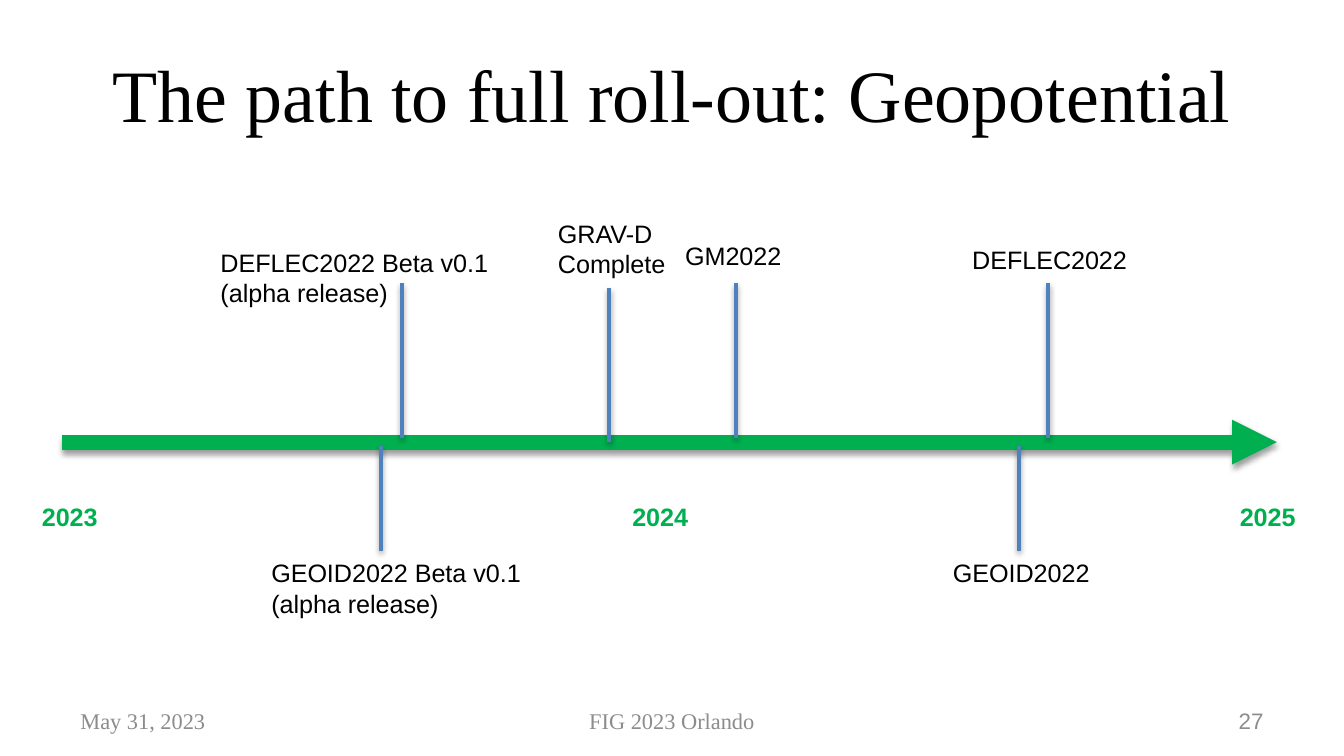
from typing import NamedTuple

from lxml.etree import SubElement
from pptx import Presentation
from pptx.dml.color import RGBColor
from pptx.enum.shapes import MSO_CONNECTOR
from pptx.enum.text import MSO_ANCHOR, PP_ALIGN
from pptx.oxml.ns import qn
from pptx.util import Emu, Inches, Pt

COLORS = {"ink": "000000", "footer": "8C8C8C", "time": "00B050", "stem": "4F81BD"}
SERIF, SANS = "Times New Roman", "Arial"
LABEL_SIZE, LABEL_LEADING = 13.5, 16.2

# Grid: 100 columns across a 16:9 slide, square cells
SLIDE_WIDTH = Inches(10)
SLIDE_HEIGHT = Emu(SLIDE_WIDTH * 9 // 16)
CELL = SLIDE_WIDTH // 100
AXIS_ROW = 32.9
YEAR_ROW = 36.8
ABOVE_AXIS, BELOW_AXIS = 32.6, 33.2
STEM_TOP, STEM_BOTTOM = 21.05, 41


class Box(NamedTuple):
    col: float
    row: float
    cols: float
    rows: float


class Style(NamedTuple):
    font: str
    size: float
    color: str
    bold: bool = False


class Milestone(NamedTuple):
    lines: tuple[str, ...]
    label: Box
    stem_col: float
    stem_start: float
    stem_end: float


class Footer(NamedTuple):
    text: str
    col: float
    cols: float
    align: PP_ALIGN
    font: str


YEARS = {"2023": 2.13, "2024": 46.06, "2025": 91.26}

MILESTONES = (
    Milestone(("GEOID2022 Beta v0.1", "(alpha release)"),
              Box(19.2, 41, 20.8, 5.6), 28.34, STEM_BOTTOM, BELOW_AXIS),
    Milestone(("GRAV-D", "Complete"),
              Box(40.53, 15.72, 10.1, 5.6), 45.34, AXIS_ROW, 21.44),
    Milestone(("DEFLEC2022",),
              Box(71.36, 17.7, 13.7, 3.3), 78, ABOVE_AXIS, STEM_TOP),
    Milestone(("GEOID2022",),
              Box(69.92, 41, 12.3, 3.3), 75.8, STEM_BOTTOM, BELOW_AXIS),
    Milestone(("GM2022",),
              Box(50, 17.4, 9.3, 3.3), 54.77, ABOVE_AXIS, STEM_TOP),
    Milestone(("DEFLEC2022 Beta v0.1", "(alpha release)"),
              Box(15.42, 17.9, 22.2, 5.6), 29.9, ABOVE_AXIS, STEM_TOP),
)

FOOTERS = (
    Footer("May 31, 2023", 5, 23.3, PP_ALIGN.LEFT, SERIF),
    Footer("FIG 2023 Orlando", 34.15, 31.7, PP_ALIGN.CENTER, SERIF),
    Footer("27", 71.7, 23.3, PP_ALIGN.RIGHT, SANS),
)


def cells(count: float) -> Emu:
    return Emu(round(count * CELL))


def add_text(slide, lines: tuple[str, ...], box: Box, style: Style,
             align: PP_ALIGN = PP_ALIGN.LEFT, anchor: MSO_ANCHOR = MSO_ANCHOR.TOP,
             wrap: bool = False, leading: float | None = None) -> None:
    frame = slide.shapes.add_textbox(*map(cells, box)).text_frame
    frame.word_wrap = wrap
    frame.vertical_anchor = anchor
    frame.text = "\n".join(lines)
    for paragraph in frame.paragraphs:
        paragraph.alignment = align
        if leading:
            paragraph.line_spacing = Pt(leading)
        paragraph.font.name = style.font
        paragraph.font.size = Pt(style.size)
        paragraph.font.bold = style.bold
        paragraph.font.color.rgb = RGBColor.from_string(COLORS[style.color])


def add_line(slide, start: tuple[float, float], end: tuple[float, float],
             color: str, width: float, arrow: bool = False) -> None:
    line = slide.shapes.add_connector(
        MSO_CONNECTOR.STRAIGHT, *map(cells, start + end))
    line.line.width = Pt(width)
    line.line.color.rgb = RGBColor.from_string(COLORS[color])
    properties = line._element.spPr
    if arrow:
        SubElement(properties.find(qn("a:ln")), qn("a:tailEnd"), type="triangle")
    # Soft shadow straight below the line
    effects = SubElement(properties, qn("a:effectLst"))
    shadow = SubElement(effects, qn("a:outerShdw"), blurRad="40000",
                        dist="20000", dir="5400000", rotWithShape="0")
    shade = SubElement(shadow, qn("a:srgbClr"), val=COLORS["ink"])
    SubElement(shade, qn("a:alpha"), val="38000")


def main() -> None:
    deck = Presentation()
    deck.slide_width, deck.slide_height = SLIDE_WIDTH, SLIDE_HEIGHT
    slide = deck.slides.add_slide(deck.slide_layouts[6])

    # Title and footer
    add_text(slide, ("The path to full roll-out: Geopotential",),
             Box(5, 2.25, 90, 9.38), Style(SERIF, 39.6, "ink"),
             PP_ALIGN.CENTER, MSO_ANCHOR.MIDDLE, wrap=True)
    for footer in FOOTERS:
        add_text(slide, (footer.text,), Box(footer.col, 52.14, footer.cols, 3),
                 Style(footer.font, 12, "footer"), footer.align,
                 MSO_ANCHOR.MIDDLE, wrap=True)

    # Time axis with its years
    add_line(slide, (4.6, AXIS_ROW), (95, AXIS_ROW), "time", 8, arrow=True)
    for year, col in YEARS.items():
        add_text(slide, (year,), Box(col, YEAR_ROW, 6.2, 3.3),
                 Style(SANS, LABEL_SIZE, "time", bold=True), leading=LABEL_LEADING)

    # Milestones
    for milestone in MILESTONES:
        add_line(slide, (milestone.stem_col, milestone.stem_start),
                 (milestone.stem_col, milestone.stem_end), "stem", 2)
        add_text(slide, milestone.lines, milestone.label,
                 Style(SANS, LABEL_SIZE, "ink"), leading=LABEL_LEADING)

    deck.save("out.pptx")


if __name__ == "__main__":
    main()
